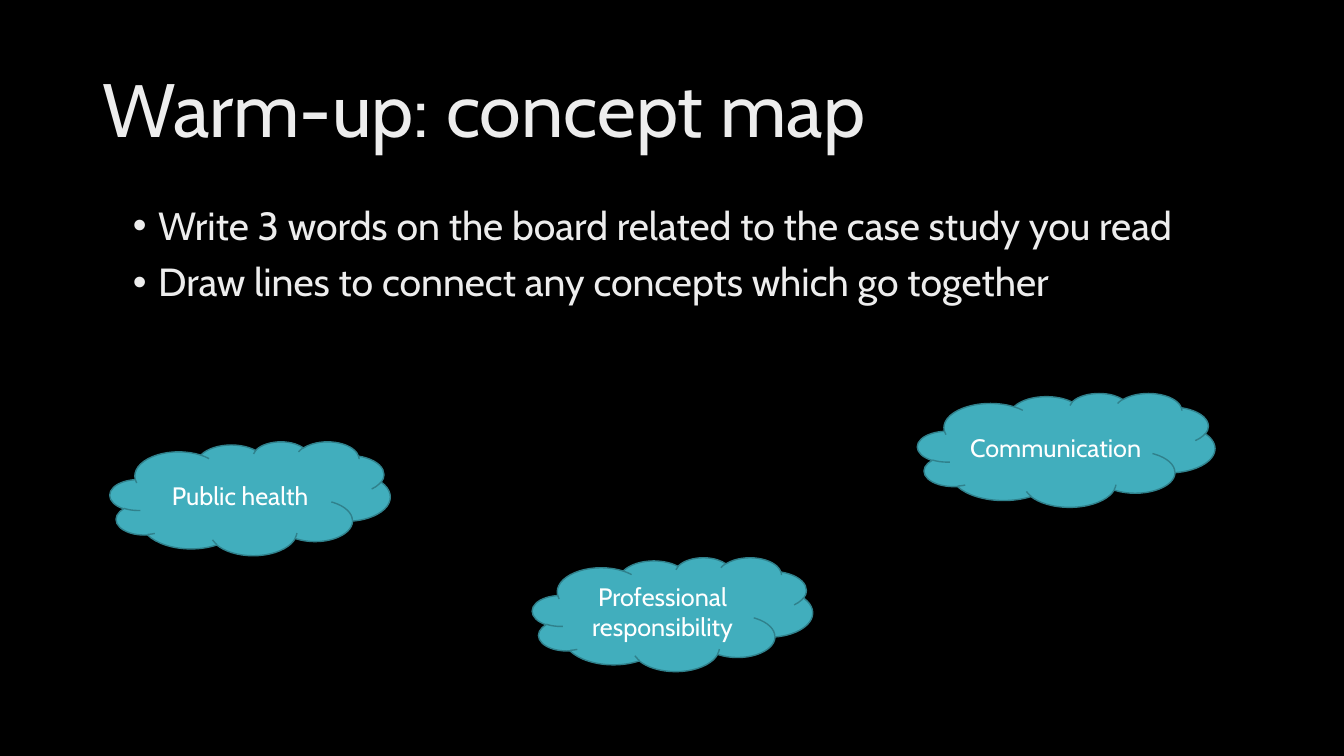
from dataclasses import dataclass

from lxml.etree import SubElement
from pptx import Presentation
from pptx.dml.color import RGBColor
from pptx.enum.shapes import MSO_SHAPE
from pptx.enum.text import MSO_ANCHOR as Anchor, PP_ALIGN as Align
from pptx.oxml.ns import qn
from pptx.shapes.autoshape import Shape
from pptx.slide import Slide
from pptx.util import Inches, Pt

BLACK = RGBColor(0x00, 0x00, 0x00)
WHITE = RGBColor(0xFF, 0xFF, 0xFF)
LIGHT = RGBColor(0xED, 0xED, 0xED)
TEAL = RGBColor(0x41, 0xAE, 0xBD)
DARK_TEAL = RGBColor(0x30, 0x81, 0x8C)
FONT = "Cabin"
CLOUD_HEIGHT = 1.13


@dataclass(frozen=True)
class Cloud:
    text: str
    left: float
    top: float
    width: float = 2.78


CLOUDS = [
    Cloud("Public health", 1.09, 4.38),
    Cloud("Communication", 9.1, 3.9, 2.95),
    Cloud("Professional responsibility", 5.28, 5.53),
]
TASKS = [
    "Write 3 words on the board related to the case study you read",
    "Draw lines to connect any concepts which go together",
]


def write_text(shape: Shape, lines: list[str], *, size: float, color: RGBColor,
               align: Align = Align.LEFT, anchor: Anchor = Anchor.MIDDLE,
               line_spacing: float = 1.0, gap: float = 0, bullet: str = "") -> None:
    """Fill a shape with paragraphs that share one format."""
    frame = shape.text_frame
    frame.word_wrap = True
    frame.vertical_anchor = anchor
    for index, line in enumerate(lines):
        paragraph = frame.paragraphs[0] if index == 0 else frame.add_paragraph()
        paragraph.text = line
        paragraph.alignment = align
        paragraph.line_spacing = line_spacing
        if index:
            paragraph.space_before = Pt(gap)
        if bullet:
            properties = paragraph._p.get_or_add_pPr()
            properties.set("marL", str(Inches(0.25)))
            properties.set("indent", str(-Inches(0.25)))
            SubElement(properties, qn("a:buFont"), typeface="Arial")
            SubElement(properties, qn("a:buChar"), char=bullet)
        paragraph.font.name = FONT
        paragraph.font.size = Pt(size)
        paragraph.font.color.rgb = color


def add_text_box(slide: Slide, left: float, top: float, width: float, height: float) -> Shape:
    return slide.shapes.add_textbox(Inches(left), Inches(top), Inches(width), Inches(height))


def add_cloud(slide: Slide, cloud: Cloud) -> None:
    shape = slide.shapes.add_shape(
        MSO_SHAPE.CLOUD, Inches(cloud.left), Inches(cloud.top),
        Inches(cloud.width), Inches(CLOUD_HEIGHT))
    shape.shadow.inherit = False
    shape.fill.solid()
    shape.fill.fore_color.rgb = TEAL
    shape.line.color.rgb = DARK_TEAL
    shape.line.width = Pt(1)
    write_text(shape, [cloud.text], size=18, color=WHITE, align=Align.CENTER)


def main() -> None:
    presentation = Presentation()
    presentation.slide_width = Inches(13.33)
    presentation.slide_height = Inches(7.5)
    slide = presentation.slides.add_slide(presentation.slide_layouts[6])
    slide.background.fill.solid()
    slide.background.fill.fore_color.rgb = BLACK

    # Title and tasks
    title = add_text_box(slide, 0.92, 0.4, 11.5, 1.45)
    write_text(title, ["Warm-up: concept map"], size=54, color=LIGHT, line_spacing=0.9)
    tasks = add_text_box(slide, 1.22, 2, 11.19, 4.76)
    write_text(tasks, TASKS, size=28, color=LIGHT, anchor=Anchor.TOP,
               line_spacing=0.9, gap=10, bullet="•")

    # Concept clouds
    for cloud in CLOUDS:
        add_cloud(slide, cloud)

    presentation.save("out.pptx")


if __name__ == "__main__":
    main()
